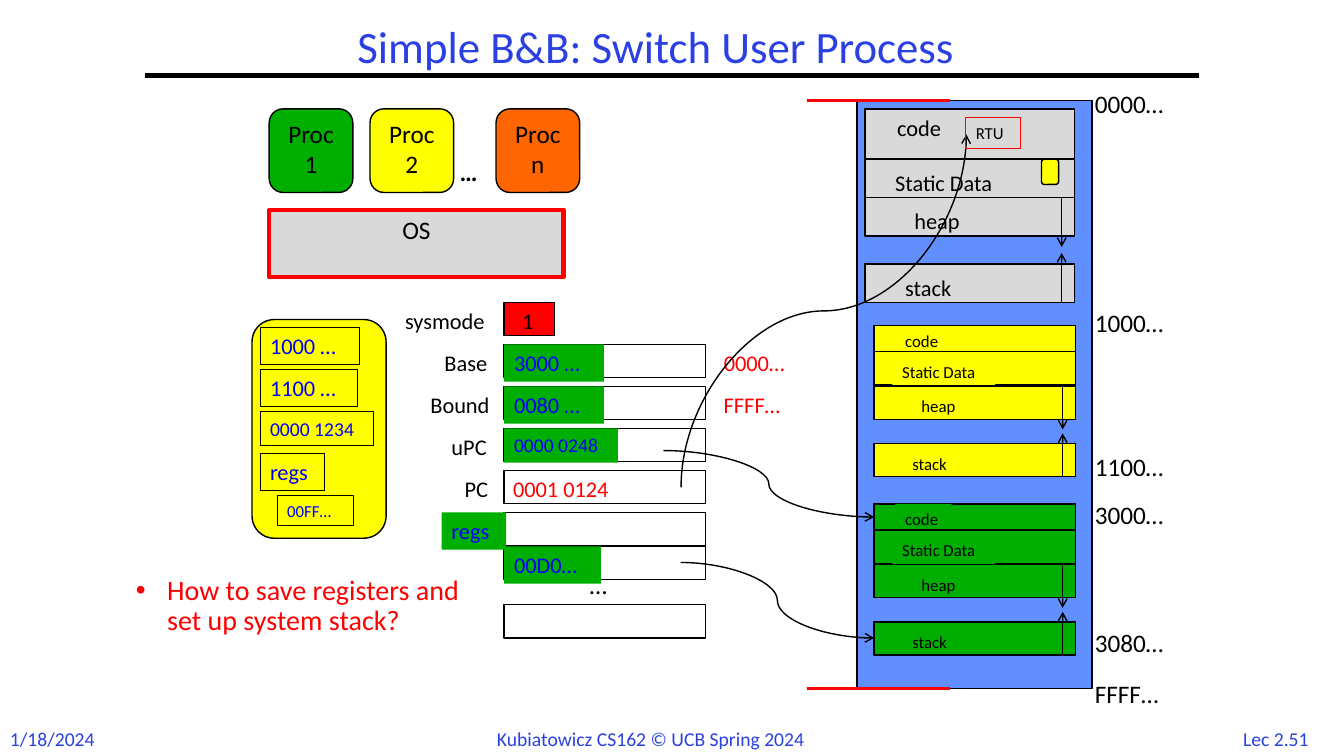
from lxml.etree import SubElement
from pptx import Presentation
from pptx.dml.color import RGBColor
from pptx.enum.shapes import MSO_CONNECTOR, MSO_SHAPE
from pptx.enum.text import MSO_ANCHOR, MSO_AUTO_SIZE, PP_ALIGN
from pptx.oxml.ns import qn
from pptx.util import Inches, Pt

COLORS = {
    "black": "000000", "title": "2A40E2", "blue": "0000FF", "red": "FF0000",
    "green": "00AE00", "yellow": "FFFF00", "orange": "FF6600",
    "gray": "D9D9D9", "memory": "618FFD",
}
FONT = "Calibri"
ROW_STEP = 5 / 12
REG_LEFT, REG_TOP, REG_HEIGHT = 5, 3, 0.33
LABEL_RIGHT = 5.02

# Segment: name, top offset, height, then label left offset, top offset, width
LARGE_SEGMENTS = [
    ("code", 0, 0.49, 0.22, 0, 0.69),
    ("Static Data", 0.5, 0.38, 0.2, 0.05, 1.3),
    ("heap", 0.88, 0.38, 0.39, 0.05, 0.7),
    ("stack", 1.54, 0.38, 0.3, 0.05, 0.73),
]
SMALL_SEGMENTS = [
    ("code", 0, 0.26, 0.21, 0, 0.56),
    ("Static Data", 0.26, 0.33, 0.18, 0.05, 1.02),
    ("heap", 0.6, 0.33, 0.37, 0.05, 0.57),
    ("stack", 1.17, 0.33, 0.28, 0.05, 0.59),
]
TEXT_HEIGHTS = {12: 0.3, 14: 0.34, 16: 0.37, 18: 0.4}


def rgb(name):
    return RGBColor.from_string(COLORS[name])


def paint(sp, fill, line, width):
    """Set fill and outline; None leaves either out."""
    if fill:
        sp.fill.solid()
        sp.fill.fore_color.rgb = rgb(fill)
    else:
        sp.fill.background()
    if line:
        sp.line.color.rgb = rgb(line)
        sp.line.width = Pt(width)
    else:
        sp.line.fill.background()


def write(tf, text, size, color, align=PP_ALIGN.LEFT, bold=None):
    tf.text = text
    p = tf.paragraphs[0]
    p.alignment = align
    font = p.runs[0].font
    font.name, font.size, font.bold = FONT, Pt(size), bold
    font.color.rgb = rgb(color)
    return p


def add_box(s, x, y, w, h, fill=None, line="black", width=1, text=None,
            shape=MSO_SHAPE.RECTANGLE):
    sp = s.shapes.add_shape(shape, Inches(x), Inches(y), Inches(w), Inches(h))
    sp.shadow.inherit = False
    paint(sp, fill, line, width)
    if text:
        sp.text_frame.vertical_anchor = MSO_ANCHOR.TOP
        write(sp.text_frame, text, 18, "black", PP_ALIGN.CENTER)


def add_label(s, text, x, y, w, size=16, color="black", fill=None, line=None,
              align=PP_ALIGN.LEFT, bold=None):
    """Add one unwrapped line of text that its box grows to fit."""
    sp = s.shapes.add_textbox(Inches(x), Inches(y), Inches(w),
                              Inches(TEXT_HEIGHTS[size]))
    paint(sp, fill, line, 0.75)
    sp.text_frame.word_wrap = False
    sp.text_frame.auto_size = MSO_AUTO_SIZE.SHAPE_TO_FIT_TEXT
    write(sp.text_frame, text, size, color, align, bold)


def add_line(s, start, end, color="black", width=1, arrow=False,
             kind=MSO_CONNECTOR.STRAIGHT, rotation=0):
    c = s.shapes.add_connector(kind, *(Inches(v) for v in (*start, *end)))
    c.line.color.rgb = rgb(color)
    c.line.width = Pt(width)
    sp_pr = c._element.spPr
    if arrow:
        SubElement(c.line._get_or_add_ln(), qn("a:tailEnd"), type="arrow")
    if rotation:
        sp_pr.xfrm.set("rot", str(rotation * 60000))
    SubElement(sp_pr, qn("a:effectLst"))


def add_address_space(s, x, y, w, segments, fill, size, gap, filled=()):
    """Draw a process's segments, with arrows for heap and stack growth."""
    for name, dy, h, label_dx, label_dy, label_w in segments:
        add_box(s, x, y + dy, w, h, fill)
        add_label(s, name, x + label_dx, y + dy + label_dy, label_w, size,
                  fill=fill if name in filled else None)
    arrow_x = x + w - 0.13
    (_, heap, heap_h, *_), (_, stack, stack_h, *_) = segments[2:]
    add_line(s, (arrow_x, y + stack + stack_h), (arrow_x, y + stack - gap), arrow=True)
    add_line(s, (arrow_x, y + heap), (arrow_x, y + heap + heap_h + gap), arrow=True)


def add_title(s):
    title = s.shapes.title
    title.left, title.top = Inches(2.17), Inches(0.08)
    title.width, title.height = Inches(8.67), Inches(0.81)
    title.text_frame.vertical_anchor = MSO_ANCHOR.MIDDLE
    p = write(title.text_frame, "Simple B&B: Switch User Process", 32, "title",
              PP_ALIGN.CENTER)
    p.line_spacing = 0.9
    add_line(s, (1.44, 0.75), (11.89, 0.75), width=3)


def add_footer(s):
    add_label(s, "1/18/2024", 0, 7.16, 1.07, 14, "title")
    add_label(s, "Kubiatowicz CS162 © UCB Spring 2024", 4.83, 7.16, 3.68, 14, "title")
    add_label(s, "Lec 2.51", 12.17, 7.16, 0.97, 14, "title", align=PP_ALIGN.CENTER)


def add_processes(s):
    add_box(s, 2.67, 2.08, 2.92, 0.67, "gray", "red", 3, "OS")
    for text, x, fill in [("Proc 1", 2.67, "green"), ("Proc 2", 3.67, "yellow"),
                          ("Proc n", 4.92, "orange")]:
        add_box(s, x, 1.08, 0.83, 0.83, fill, text=text,
                shape=MSO_SHAPE.ROUNDED_RECTANGLE)
    add_label(s, "…", 4.46, 1.5, 0.45, 18, bold=True)


def add_memory(s):
    add_box(s, 8.5, 1, 2.33, 5.83, "memory")
    add_address_space(s, 8.58, 1.08, 2.08, LARGE_SEGMENTS, "gray", 16, 0.11)
    add_address_space(s, 8.67, 3.23, 2, SMALL_SEGMENTS, "yellow", 12, 0.1,
                      ["Static Data"])
    add_address_space(s, 8.67, 5, 2, SMALL_SEGMENTS, "green", 12, 0.1,
                      ["code", "Static Data"])
    for address, y in [("0000…", 0.83), ("1000…", 3), ("1100…", 4.43),
                       ("3000…", 4.9), ("3080…", 6.17), ("FFFF…", 6.68)]:
        add_label(s, address, 10.76, y, 1.02, 18)
    for y in (1, 6.83):
        add_line(s, (8, y), (9.42, y), "red", 2.25)
    add_box(s, 10.33, 1.58, 0.17, 0.25, "yellow", shape=MSO_SHAPE.ROUNDED_RECTANGLE)


def add_registers(s):
    add_box(s, REG_LEFT, REG_TOP, 0.5, REG_HEIGHT, "red")
    add_label(s, "1", 5.08, REG_TOP, 0.33)
    rows = [REG_TOP + i * ROW_STEP for i in range(6)]
    for y in (*rows[1:], 5.42, 6):
        add_box(s, REG_LEFT, y, 2, REG_HEIGHT)
    for y, (name, w) in zip(rows, [("sysmode", 1.1), ("Base", 0.71), ("Bound", 0.85),
                                   ("uPC", 0.64), ("PC", 0.51)]):
        add_label(s, name, LABEL_RIGHT - w, y, w)
    for text, x, y, w, size in [("3000 …", REG_LEFT, rows[1], 0.99, 16),
                                ("0080 …", REG_LEFT, rows[2], 0.99, 16),
                                ("0000 0248", REG_LEFT, rows[3], 1.13, 14),
                                ("regs", 4.38, rows[5], 0.64, 16),
                                ("00D0…", REG_LEFT, 5.42, 0.96, 16)]:
        add_label(s, text, x, y, w, size, "blue", "green")
    for text, x, y, w in [("0000…", 7.08, rows[1], 0.92), ("FFFF…", 7.08, rows[2], 0.97),
                          ("0001 0124", 4.99, rows[4], 1.26)]:
        add_label(s, text, x, y, w, color="red")
    add_label(s, "…", 5.75, 5.6, 0.45, 18)


def add_pointers(s):
    """Link PC, uPC and the stack register to the memory they refer to."""
    for start, end, rotation in [((9.92, 4.5), (6.42, 1.67), 90),
                                 ((6.58, 4.47), (8.67, 5.13), 0),
                                 ((6.75, 5.58), (8.67, 6.33), 0)]:
        add_line(s, start, end, arrow=True, kind=MSO_CONNECTOR.CURVE, rotation=rotation)
    add_label(s, "RTU", 9.58, 1.17, 0.54, 12, line="red")


def add_saved_state(s):
    add_box(s, 2.5, 3.17, 1.33, 2.17, "yellow", shape=MSO_SHAPE.ROUNDED_RECTANGLE)
    for i, (text, x, w, size) in enumerate([
            ("1000 …", 2.58, 0.99, 16), ("1100 …", 2.58, 0.97, 16),
            ("0000 1234", 2.58, 1.13, 14), ("regs", 2.58, 0.64, 16),
            ("00FF…", 2.75, 0.76, 12)]):
        add_label(s, text, x, 3.25 + i * ROW_STEP, w, size, "blue", "yellow", "black")


def add_question(s):
    sp = s.shapes.add_textbox(Inches(1.25), Inches(5.67), Inches(3.58), Inches(1.33))
    sp.text_frame.word_wrap = True
    p = write(sp.text_frame, "How to save registers and set up system stack?", 20, "red")
    p.line_spacing = 0.9
    p_pr = p._p.get_or_add_pPr()
    p_pr.set("marL", str(Inches(0.31)))
    p_pr.set("indent", str(Inches(-0.31)))
    SubElement(p_pr, qn("a:buFont"), typeface="Arial")
    SubElement(p_pr, qn("a:buChar"), char="•")


def main():
    prs = Presentation()
    prs.slide_width, prs.slide_height = Inches(13.33), Inches(7.5)
    s = prs.slides.add_slide(prs.slide_layouts.get_by_name("Title Only"))
    add_title(s)
    add_footer(s)
    add_processes(s)
    add_memory(s)
    add_registers(s)
    add_pointers(s)
    add_saved_state(s)
    add_question(s)
    prs.save("out.pptx")


if __name__ == "__main__":
    main()
